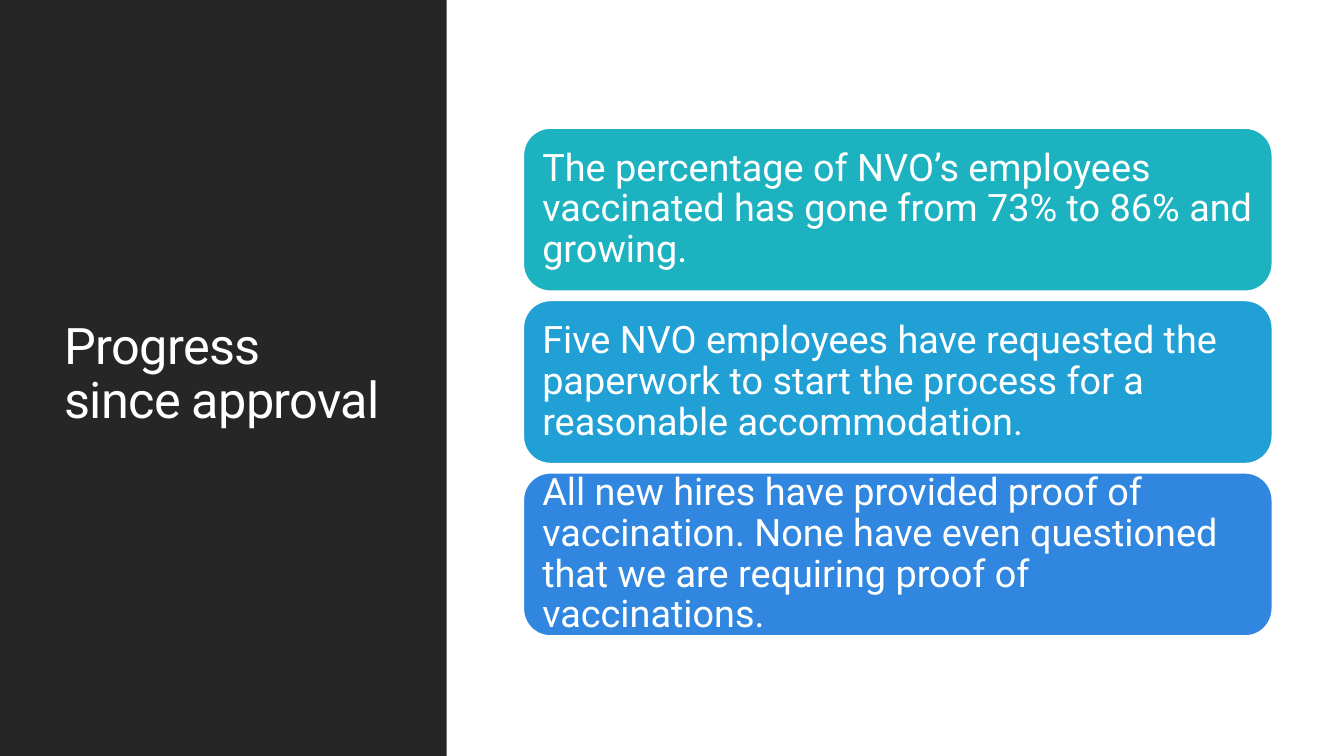
"""Build the slide on progress since approval: a dark title panel and three cards."""
from pptx import Presentation
from pptx.dml.color import RGBColor
from pptx.enum.shapes import MSO_SHAPE
from pptx.enum.text import MSO_ANCHOR, PP_ALIGN
from pptx.util import Inches, Pt

RECT, ROUNDED = MSO_SHAPE.RECTANGLE, MSO_SHAPE.ROUNDED_RECTANGLE
MIDDLE, LEFT = MSO_ANCHOR.MIDDLE, PP_ALIGN.LEFT

TITLE = "Progress since approval"
CARDS = [
    ("teal", "The percentage of NVO’s employees vaccinated has gone from 73% to 86% and growing."),
    ("sky", "Five NVO employees have requested the paperwork to start the process for a "
            "reasonable accommodation."),
    ("blue", "All new hires have provided proof of vaccination. None have even questioned "
             "that we are requiring proof of vaccinations."),
]
COLORS = {"dark": "262626", "white": "FFFFFF", "teal": "1DB2C0", "sky": "21A0D6", "blue": "3187DF"}
FONT = "Roboto"
SLIDE_W, SLIDE_H = 13.33, 7.5
PANEL_W = 4.43
TITLE_BOX = (0.54, 0.57, 3.37, 6.31)
CARD_X, CARD_Y, CARD_W, CARD_H, CARD_STEP = 5.19, 1.27, 7.43, 1.62, 1.71
CARD_INSET = 0.11


def rgb(name):
    return RGBColor.from_string(COLORS[name])


def add_box(s, kind, box, color):
    sp = s.shapes.add_shape(kind, *map(Inches, box))
    sp.shadow.inherit = False
    sp.fill.solid()
    sp.fill.fore_color.rgb = rgb(color)
    sp.line.fill.background()
    return sp


def write(sp, text, size, inset_x, inset_y):
    tf = sp.text_frame
    frame = {"word_wrap": True, "vertical_anchor": MIDDLE,
             "margin_left": Inches(inset_x), "margin_right": Inches(inset_x),
             "margin_top": Inches(inset_y), "margin_bottom": Inches(inset_y)}
    for name, value in frame.items():
        setattr(tf, name, value)
    p = tf.paragraphs[0]
    p.alignment, p.line_spacing = LEFT, 0.9
    r = p.add_run()
    r.text = text
    for name, value in {"name": FONT, "size": Pt(size), "bold": False}.items():
        setattr(r.font, name, value)
    r.font.color.rgb = rgb("white")
    return r


def main():
    prs = Presentation()
    prs.slide_width, prs.slide_height = Inches(SLIDE_W), Inches(SLIDE_H)
    s = prs.slides.add_slide(prs.slide_layouts[5])

    panel = add_box(s, RECT, (0, 0, PANEL_W, SLIDE_H), "dark")
    title = s.shapes.title
    title._element.addprevious(panel._element)
    for name, value in zip(("left", "top", "width", "height"), TITLE_BOX):
        setattr(title, name, Inches(value))
    r = write(title, TITLE, 36, 0.1, 0.05)
    r.font._element.set("spc", "-50")

    for i, (color, text) in enumerate(CARDS):
        card = add_box(s, ROUNDED, (CARD_X, CARD_Y + i * CARD_STEP, CARD_W, CARD_H), color)
        card.line.color.rgb = rgb("white")
        card.line.width = Pt(1.25)
        write(card, text, 27, CARD_INSET, CARD_INSET)

    prs.save("out.pptx")


if __name__ == "__main__":
    main()
